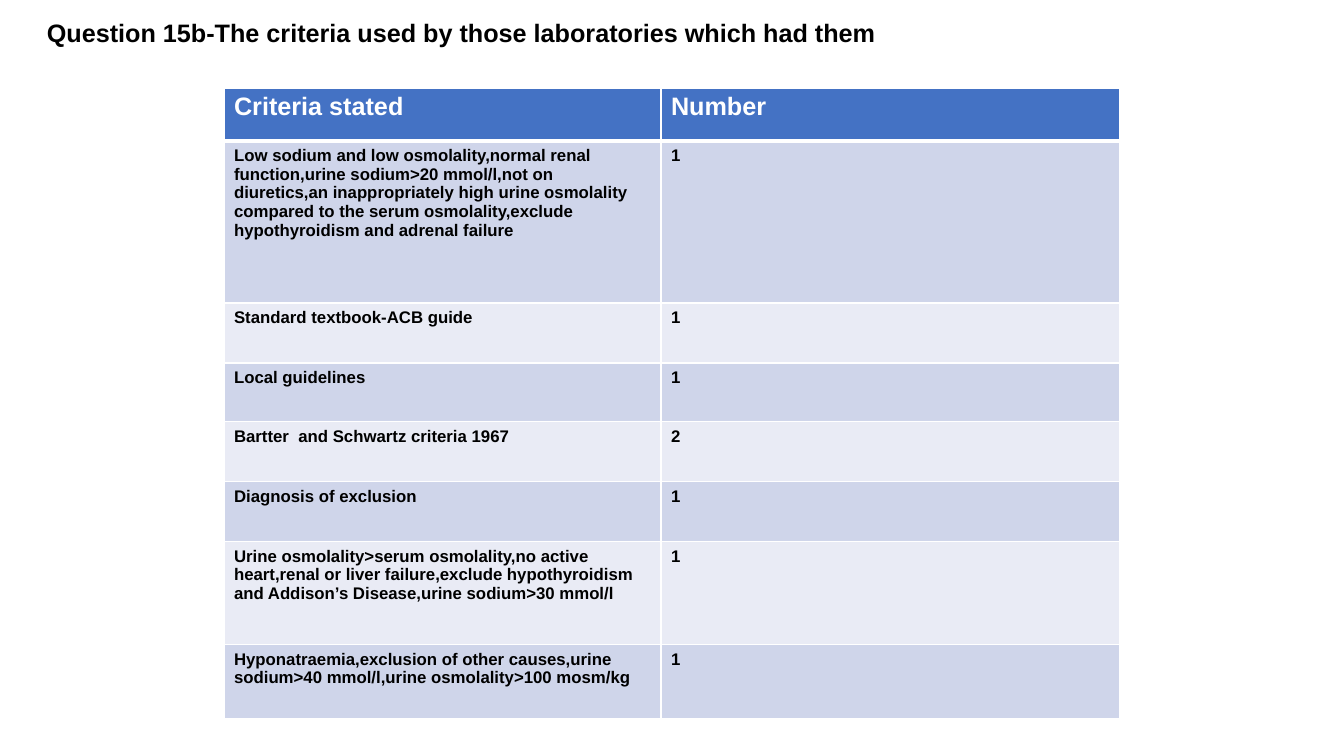
from lxml import etree
from pptx import Presentation, util as u
from pptx.dml.color import RGBColor
from pptx.enum import text
from pptx.oxml.ns import qn

PX = 914400 / 100.8  # EMU in one px
THEME = {
    "font": "Arial", "head_size": 18, "body_size": 12,
    "ink": "000000", "white": "FFFFFF", "head_fill": "4472C4",
    "bands": ["CFD5EA", "E9EBF5"],
}


def px(*lengths):
    return [u.Emu(round(n * PX)) for n in lengths]


def write(tf, words, size, color):
    r = tf.paragraphs[0].add_run()
    r.text = words
    fmt = {"name": THEME["font"], "size": u.Pt(size), "bold": True}
    for key, value in fmt.items():
        setattr(r.font, key, value)
    r.font.color.rgb = RGBColor.from_string(color)


prs = Presentation()
prs.slide_width, prs.slide_height = px(1344, 756)
s = prs.slides.add_slide(prs.slide_layouts[6])

# Criteria table: wording, count, row height in px
rows = [
    ("Criteria stated", "Number", 53),
    ("Low sodium and low osmolality,normal renal function,urine sodium>20 mmol/l,"
     "not on diuretics,an inappropriately high urine osmolality compared to the "
     "serum osmolality,exclude hypothyroidism and adrenal failure", "1", 162),
    ("Standard textbook-ACB guide", "1", 60),
    ("Local guidelines", "1", 59),
    ("Bartter  and Schwartz criteria 1967", "2", 60),
    ("Diagnosis of exclusion", "1", 60),
    ("Urine osmolality>serum osmolality,no active heart,renal or liver failure,"
     "exclude hypothyroidism and Addison’s Disease,urine sodium>30 mmol/l", "1", 103),
    ("Hyponatraemia,exclusion of other causes,urine sodium>40 mmol/l,"
     "urine osmolality>100 mosm/kg", "1", 74),
]
col_widths = [437, 459]
table_height = sum(height for *_, height in rows)
tbl = s.shapes.add_table(len(rows), len(col_widths),
                         *px(224, 88, sum(col_widths), table_height)).table
for col, width in zip(tbl.columns, px(*col_widths)):
    col.width = width

for i, (*words, height) in enumerate(rows):
    tbl.rows[i].height = px(height)[0]
    head = i == 0
    size = THEME["head_size" if head else "body_size"]
    color = THEME["white" if head else "ink"]
    fill = THEME["head_fill"] if head else THEME["bands"][(i - 1) % 2]
    for j, label in enumerate(words):
        cell = tbl.cell(i, j)
        write(cell.text_frame, label, size, color)
        # White rules, thicker between header and body
        tcPr = cell._tc.get_or_add_tcPr()
        for side in "LRTB":
            thick = (i, side) in [(0, "B"), (1, "T")]
            ln = etree.SubElement(tcPr, qn(f"a:ln{side}"), w=str(u.Pt(3 if thick else 1)))
            solid = etree.SubElement(ln, qn("a:solidFill"))
            etree.SubElement(solid, qn("a:srgbClr"), val=THEME["white"])
        cell.fill.solid()
        cell.fill.fore_color.rgb = RGBColor.from_string(fill)

# Title
tf = s.shapes.add_textbox(*px(37, 12, 870, 40)).text_frame
tf.word_wrap = False
tf.auto_size = text.MSO_AUTO_SIZE.SHAPE_TO_FIT_TEXT
write(tf, "Question 15b-The criteria used by those laboratories which had them",
      THEME["head_size"], THEME["ink"])

prs.save("out.pptx")
